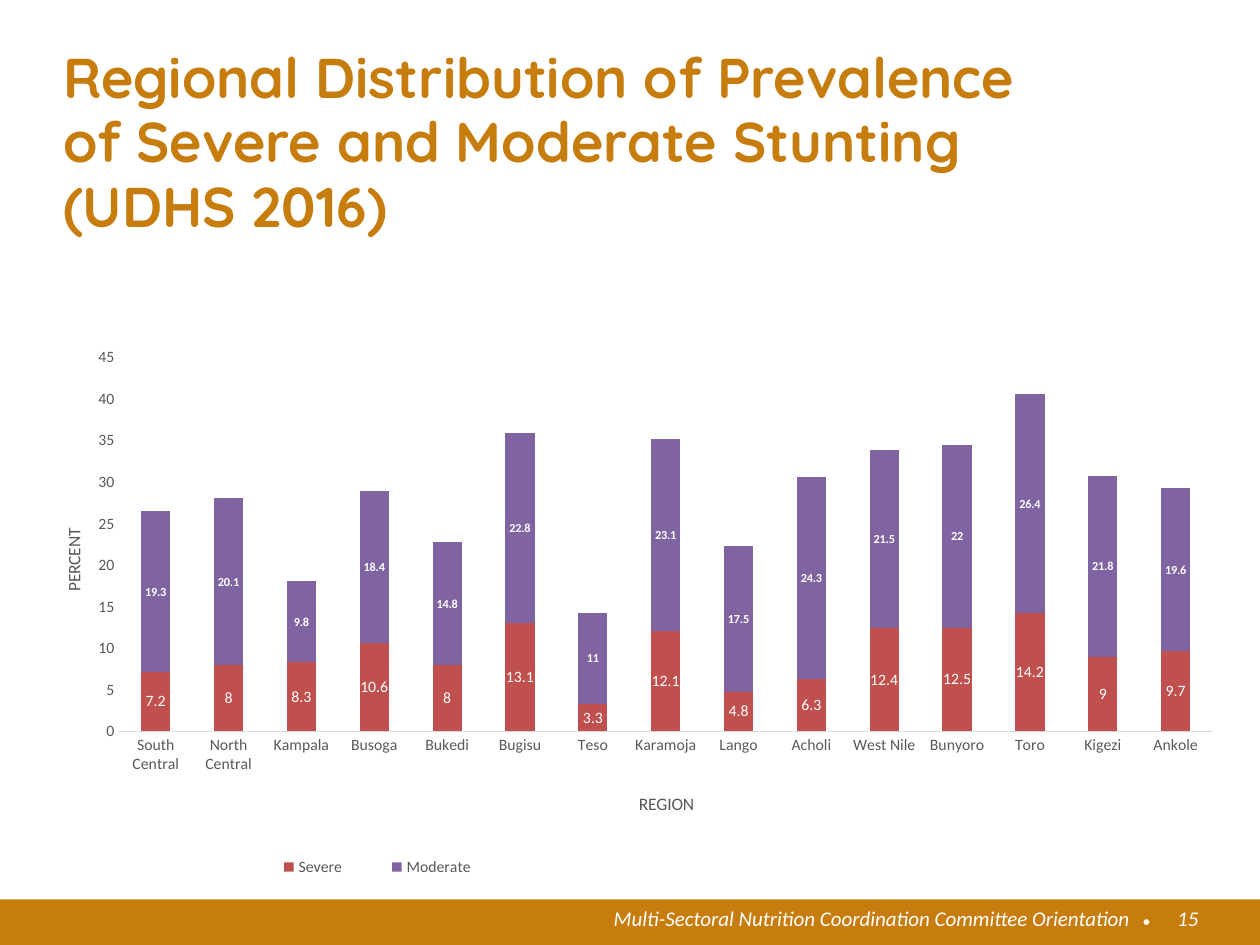
from dataclasses import dataclass

from lxml.etree import SubElement
from pptx import Presentation
from pptx.chart.data import CategoryChartData
from pptx.dml.color import RGBColor
from pptx.enum.chart import XL_CHART_TYPE, XL_LABEL_POSITION, XL_LEGEND_POSITION, XL_TICK_MARK
from pptx.enum.shapes import MSO_SHAPE
from pptx.enum.text import MSO_ANCHOR, PP_ALIGN
from pptx.oxml import parse_xml
from pptx.oxml.ns import nsdecls, qn
from pptx.util import Cm, Pt


@dataclass(frozen=True)
class Theme:
    accent: str = "C77C0E"
    light: str = "FFFFFF"
    muted: str = "595959"
    axis: str = "D9D9D9"
    severe: str = "C0504D"
    moderate: str = "8064A2"
    head_font: str = "Quicksand"
    body_font: str = "Calibri"
    bullet_font: str = "Arial"
    title: int = 32
    footer: int = 12
    axis_title: int = 10
    tick: int = 9
    small: int = 7


THEME = Theme()
REGIONS = ["South Central", "North Central", "Kampala", "Busoga", "Bukedi",
           "Bugisu", "Teso", "Karamoja", "Lango", "Acholi", "West Nile",
           "Bunyoro", "Toro", "Kigezi", "Ankole"]
SEVERE = [7.2, 8, 8.3, 10.6, 8, 13.1, 3.3, 12.1, 4.8, 6.3, 12.4, 12.5, 14.2, 9, 9.7]
MODERATE = [19.3, 20.1, 9.8, 18.4, 14.8, 22.8, 11, 23.1, 17.5, 24.3, 21.5, 22,
            26.4, 21.8, 19.6]


def rgb(value):
    return RGBColor.from_string(value)


def style_font(font, size, color, name=THEME.body_font, bold=False, italic=False):
    font.size, font.name = Pt(size), name
    font.bold, font.italic = bold, italic
    font.color.rgb = rgb(color)


def write(tf, text, align=PP_ALIGN.LEFT, wrap=True, spacing=None, **font):
    tf.word_wrap = wrap
    tf.vertical_anchor = MSO_ANCHOR.TOP
    tf.margin_left = tf.margin_top = tf.margin_right = tf.margin_bottom = 0
    p = tf.paragraphs[0]
    p.text = text
    p.alignment, p.line_spacing = align, spacing
    for r in p.runs:
        style_font(r.font, **font)


def set_layout(parent, index, target=None, **values):
    for old in parent.findall(qn("c:layout")):
        parent.remove(old)
    layout = parse_xml(f"<c:layout {nsdecls('c')}><c:manualLayout/></c:layout>")
    manual = layout[0]
    if target:
        SubElement(manual, qn("c:layoutTarget")).set("val", target)
    for mode in ("xMode", "yMode"):
        SubElement(manual, qn(f"c:{mode}")).set("val", "edge")
    for key, value in values.items():
        SubElement(manual, qn(f"c:{key}")).set("val", str(value))
    parent.insert(index, layout)


def add_title(s, x, y, w, h):
    sp = s.shapes.title
    sp.left, sp.top, sp.width, sp.height = Cm(x), Cm(y), Cm(w), Cm(h)
    write(sp.text_frame,
          "Regional Distribution of Prevalence\vof Severe and Moderate Stunting\v(UDHS 2016)",
          wrap=False, spacing=0.96, size=THEME.title, color=THEME.accent,
          name=THEME.head_font, bold=True)


def style_axis(axis, title, x, y):
    axis.has_major_gridlines = False
    axis.major_tick_mark = axis.minor_tick_mark = XL_TICK_MARK.NONE
    style_font(axis.tick_labels.font, THEME.tick, THEME.muted)
    p = axis.axis_title.text_frame.paragraphs[0]
    r = p.add_run()
    r.text = title
    style_font(r.font, THEME.axis_title, THEME.muted)
    set_layout(axis.axis_title.format.line and axis.axis_title.element, 1, x=x, y=y)


def add_stunting_chart(s, x, y, w, h):
    data = CategoryChartData()
    data.categories = REGIONS
    data.add_series("Severe", SEVERE)
    data.add_series("Moderate", MODERATE)
    chart = s.shapes.add_chart(XL_CHART_TYPE.COLUMN_STACKED,
                               Cm(x), Cm(y), Cm(w), Cm(h), data).chart
    chart.has_title = False
    style_font(chart.font, THEME.axis_title, THEME.muted)

    style_axis(chart.category_axis, "REGION", 0.5, 0.83)
    chart.category_axis.format.line.color.rgb = rgb(THEME.axis)
    chart.category_axis.format.line.width = Pt(0.75)
    values = chart.value_axis
    style_axis(values, "PERCENT", 0.02, 0.42)
    values.minimum_scale, values.maximum_scale, values.major_unit = 0, 45, 5
    values.format.line.fill.background()
    for body in chart.element.xpath(".//c:valAx/c:title//a:bodyPr"):
        body.set("rot", "-5400000")
        body.set("vert", "horz")

    plot = chart.plots[0]
    plot.gap_width, plot.overlap, plot.vary_by_categories = 150, 100, False
    looks = [(THEME.severe, THEME.tick, False), (THEME.moderate, THEME.small, True)]
    for series, (color, size, bold) in zip(plot.series, looks):
        series.format.fill.solid()
        series.format.fill.fore_color.rgb = rgb(color)
        labels = series.data_labels
        labels.show_value = True
        labels.position = XL_LABEL_POSITION.CENTER
        style_font(labels.font, size, THEME.light, bold=bold)

    chart.has_legend = True
    chart.legend.position = XL_LEGEND_POSITION.BOTTOM
    chart.legend.include_in_layout = False
    style_font(chart.legend.font, THEME.tick, THEME.muted)
    set_layout(chart.element.xpath(".//c:legend")[0], 1, x=0.17, y=0.92, w=0.23, h=0.06)
    set_layout(chart.element.xpath(".//c:plotArea")[0], 0, target="inner",
               x=0.07, y=0.16, w=0.91, h=0.58)


def add_footer(s, x, y, w, h):
    shapes = s.shapes.add_group_shape().shapes
    bar = shapes.add_shape(MSO_SHAPE.RECTANGLE, Cm(x), Cm(y), Cm(w), Cm(h))
    bar.shadow.inherit = False
    bar.fill.solid()
    bar.fill.fore_color.rgb = rgb(THEME.accent)
    bar.line.fill.background()
    italic = dict(align=PP_ALIGN.RIGHT, name=THEME.body_font, italic=True)
    parts = [
        ("15", 23.32, 0.13, 0.84, 0.81, italic),
        ("Multi-Sectoral Nutrition Coordination Committee Orientation",
         12.29, 0.13, 10.49, 1.02, italic),
        ("•", 23.04, 0.18, 0.46, 0.51, dict(name=THEME.bullet_font)),
    ]
    for text, dx, dy, width, height, look in parts:
        box = shapes.add_textbox(Cm(x + dx), Cm(y + dy), Cm(width), Cm(height))
        write(box.text_frame, text, size=THEME.footer, color=THEME.light, **look)


def main():
    prs = Presentation()
    prs.slide_width, prs.slide_height = Cm(25.4), Cm(19.05)
    s = prs.slides.add_slide(prs.slide_layouts[5])
    add_title(s, 1.27, 0.94, 22.86, 2.01)
    add_stunting_chart(s, 0.71, 5.13, 24.21, 13)
    add_footer(s, 0, 18.13, 25.4, 0.92)
    prs.save("out.pptx")


if __name__ == "__main__":
    main()
